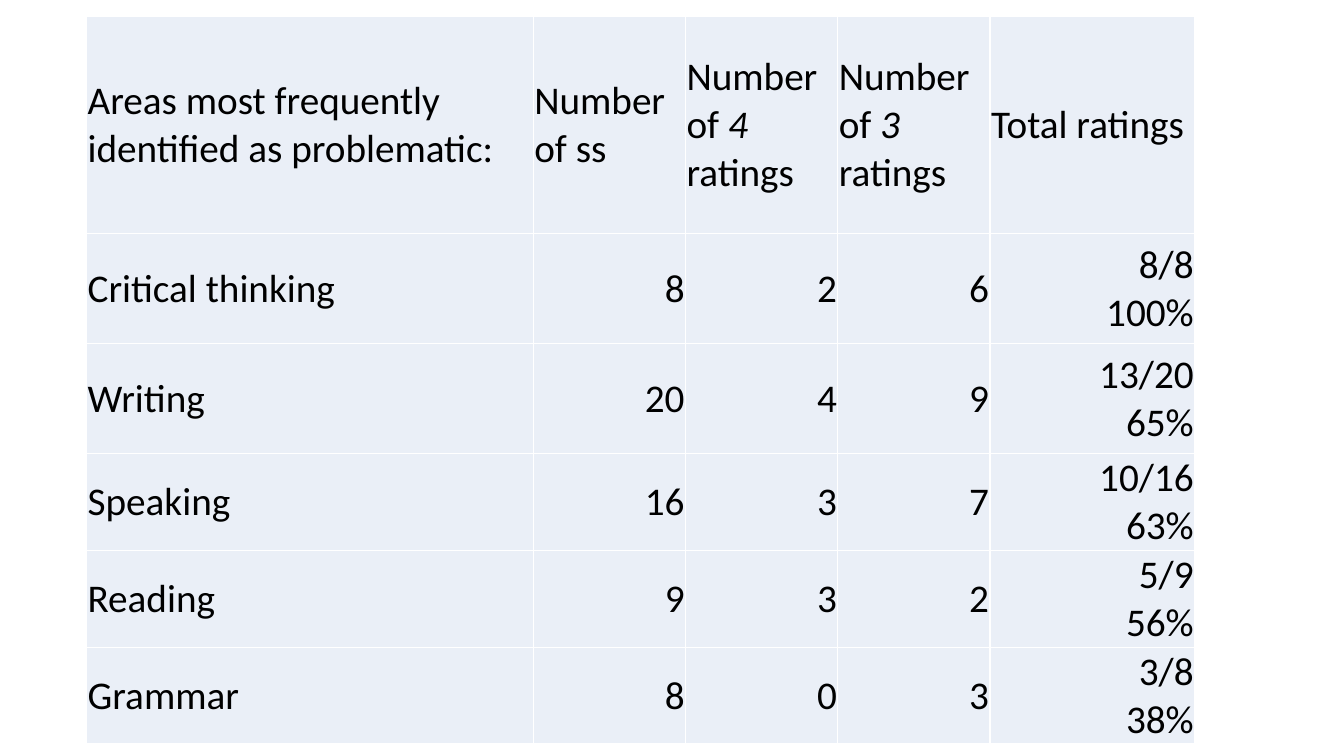
from lxml import etree
from pptx import Presentation
from pptx.dml.color import RGBColor
from pptx.enum import text
from pptx.oxml import ns
from pptx.util import Inches, Pt

HEADINGS = [
    ["Areas most frequently identified as problematic:"],
    ["Number of ss"],
    ["Number of ", "4", " ratings"],
    ["Number of ", "3", " ratings"],
    ["Total ratings"],
]
AREAS = [
    ("Critical thinking", 8, 2, 6, "8/8", "100%"),
    ("Writing", 20, 4, 9, "13/20", "65%"),
    ("Speaking", 16, 3, 7, "10/16", "63%"),
    ("Reading", 9, 3, 2, "5/9", "56%"),
    ("Grammar", 8, 0, 3, "3/8", "38%"),
]
COL_WIDTHS = [4.43, 1.51, 1.51, 1.51, 2.03]
ROW_HEIGHTS = [2.16, 1.09, 1.09, 0.72, 0.72, 0.72]
LEFT, TOP = 0.86, 0.16
FONT = "Calibri"
BLACK = RGBColor(0x00, 0x00, 0x00)
WHITE = RGBColor(0xFF, 0xFF, 0xFF)
PALE_BLUE = RGBColor(0xEA, 0xEF, 0xF7)


def add_borders(cell):
    tc_pr = cell._tc.get_or_add_tcPr()
    for side in ("a:lnL", "a:lnR", "a:lnT", "a:lnB"):
        ln = etree.SubElement(tc_pr, ns.qn(side), w=str(Pt(1)))
        fill = etree.SubElement(ln, ns.qn("a:solidFill"))
        etree.SubElement(fill, ns.qn("a:srgbClr"), val=str(WHITE))


def fill_cell(cell, paragraphs, align):
    add_borders(cell)
    cell.fill.solid()
    cell.fill.fore_color.rgb = PALE_BLUE
    cell.vertical_anchor = text.MSO_ANCHOR.MIDDLE
    cell.margin_left = cell.margin_right = cell.margin_top = Inches(0.01)
    cell.margin_bottom = 0
    tf = cell.text_frame
    for i, runs in enumerate(paragraphs):
        p = tf.add_paragraph() if i else tf.paragraphs[0]
        p.alignment = align
        for j, words in enumerate(runs):
            r = p.add_run()
            r.text = words
            r.font.name = FONT
            r.font.size = Pt(28)
            r.font.color.rgb = BLACK
            r.font.bold = False
            r.font.italic = j == 1


def main():
    prs = Presentation()
    prs.slide_width, prs.slide_height = Inches(13.33), Inches(7.5)
    s = prs.slides.add_slide(prs.slide_layouts[6])
    rows = [[[runs] for runs in HEADINGS]]
    for *single, ratio, percent in AREAS:
        rows.append([[[str(v)]] for v in single] + [[[ratio], [percent]]])

    table = s.shapes.add_table(
        len(rows), len(COL_WIDTHS), Inches(LEFT), Inches(TOP),
        Inches(sum(COL_WIDTHS)), Inches(sum(ROW_HEIGHTS))).table
    table.first_row = table.horz_banding = False
    for col, width in zip(table.columns, COL_WIDTHS):
        col.width = Inches(width)
    for row, height in zip(table.rows, ROW_HEIGHTS):
        row.height = Inches(height)
    for i, row in enumerate(rows):
        for j, paragraphs in enumerate(row):
            align = text.PP_ALIGN.RIGHT if i and j else text.PP_ALIGN.LEFT
            fill_cell(table.cell(i, j), paragraphs, align)
    prs.save("out.pptx")


if __name__ == "__main__":
    main()
